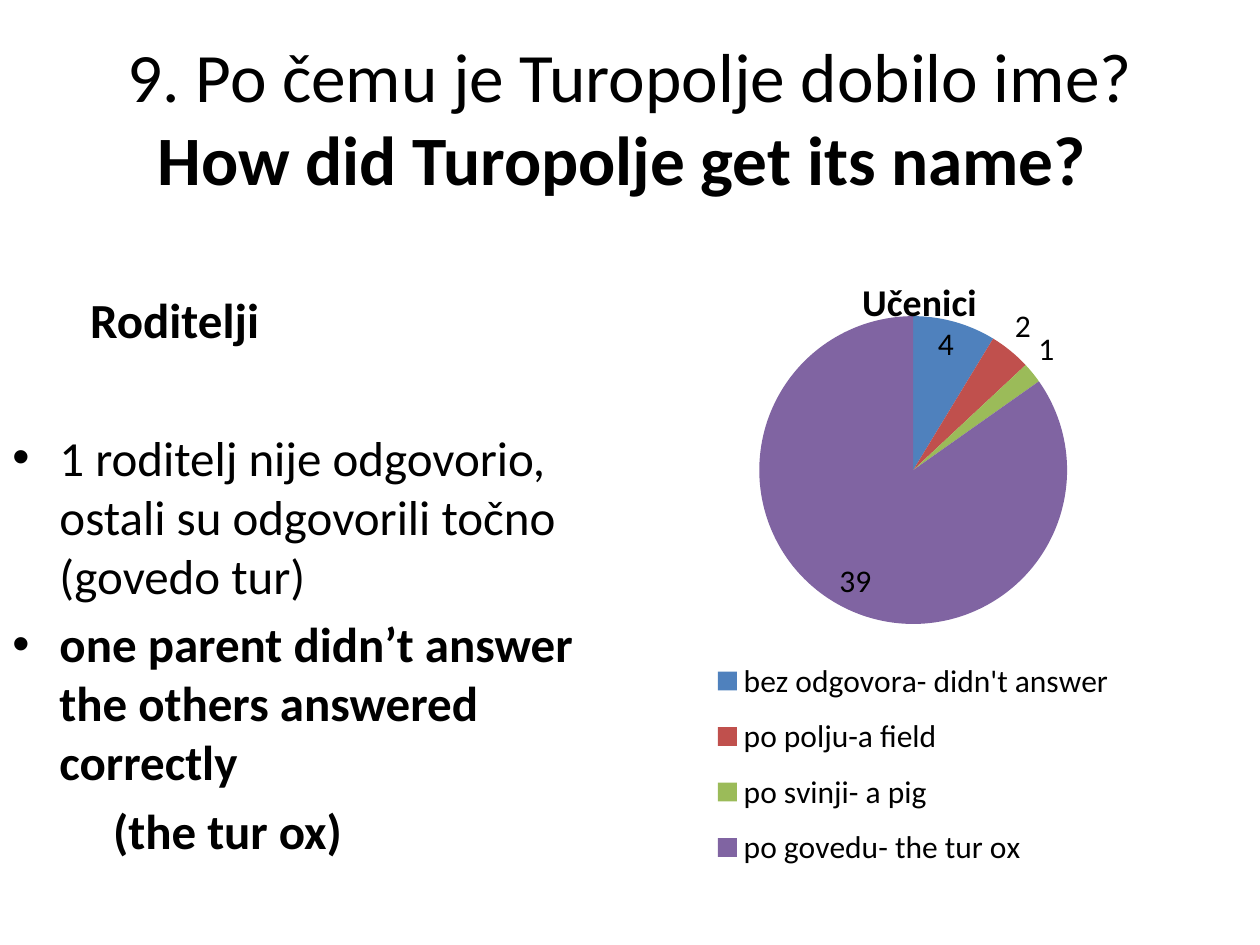
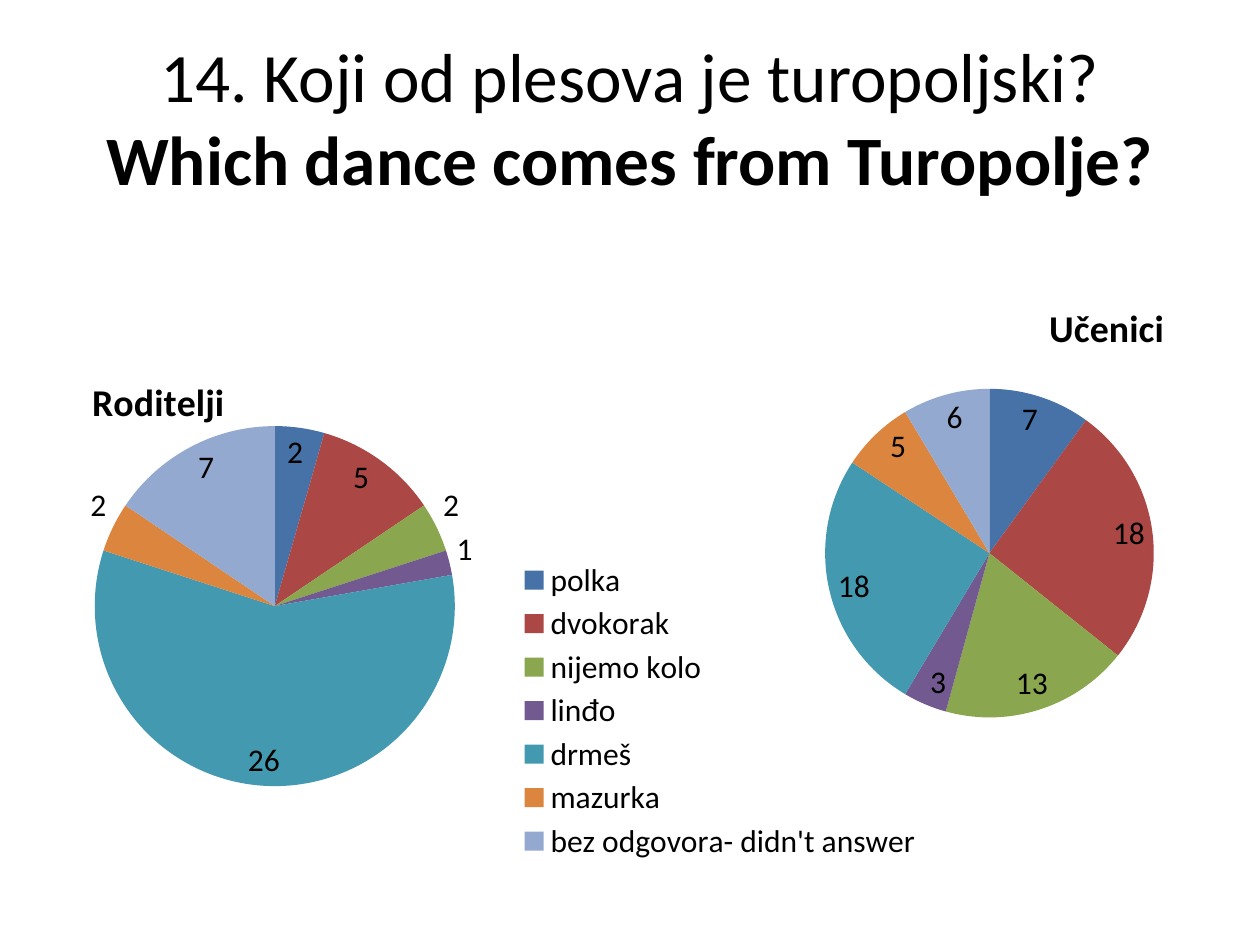
from lxml.etree import SubElement, Element
from pptx import Presentation
from pptx.chart.data import CategoryChartData as Data
from pptx.dml.color import RGBColor as Rgb
from pptx.enum.chart import XL_CHART_TYPE as Kind, XL_LABEL_POSITION as Spot
from pptx.enum.chart import XL_LEGEND_POSITION as Side
from pptx.enum.text import MSO_ANCHOR as Anchor, PP_ALIGN as Align
from pptx.oxml.ns import qn
from pptx.util import Cm, Pt

INK = {
    "text": "000000", "blue": "4F81BD", "red": "C0504D", "green": "9BBB59",
    "plum": "8064A2", "navy": "4672A8", "brick": "AB4744", "moss": "8AA64F",
    "grape": "725990", "teal": "4299B0", "rust": "DC853E", "pale": "93A9CF",
}
FOUR = ["blue", "red", "green", "plum"]
SEVEN = ["navy", "brick", "moss", "grape", "teal", "rust", "pale"]


class Deck:
    """Holds the style and the current slide."""

    def __init__(self):
        self.prs = Presentation()
        self.prs.slide_width, self.prs.slide_height = Cm(25.4), Cm(19.05)
        self.slide = None

    def page(self, first, second):
        self.slide = self.prs.slides.add_slide(self.prs.slide_layouts[6])
        frame = self.box(1.27, 0.76, 22.86, 3.17)
        frame.vertical_anchor = Anchor.MIDDLE
        para = frame.paragraphs[0]
        para.alignment = Align.CENTER
        self.run(para, first, 39.6)
        para.add_line_break()
        self.run(para, second, 39.6, True)

    def style(self, font, size, bold=False):
        look = {"name": "Calibri", "size": Pt(size), "bold": bold}
        for key, value in look.items():
            setattr(font, key, value)
        font.color.rgb = Rgb.from_string(INK["text"])

    def run(self, para, text, size, bold=False):
        run = para.add_run()
        run.text = text
        self.style(run.font, size, bold)

    def box(self, *area):
        frame = self.slide.shapes.add_textbox(*map(Cm, area)).text_frame
        frame.word_wrap = True
        return frame

    def body(self, area, rows):
        frame = self.box(*area)
        for num, (text, bold, mark, left, gap) in enumerate(rows):
            para = frame.add_paragraph() if num else frame.paragraphs[0]
            if num:
                para.space_before = Pt(gap)
            props = para._p.get_or_add_pPr()
            props.set("marL", str(Cm(left)))
            props.set("indent", str(-Cm(left) if mark else 0))
            if mark:
                SubElement(props, qn("a:buFont")).set("typeface", "Arial")
                SubElement(props, qn("a:buChar")).set("char", mark)
            self.run(para, text, 28, bold)

    def place(self, part, index, spots, inner=False):
        for old in part.findall(qn("c:layout")):
            part.remove(old)
        lay = Element(qn("c:layout"))
        part.insert(index, lay)
        man = SubElement(lay, qn("c:manualLayout"))
        if inner:
            SubElement(man, qn("c:layoutTarget")).set("val", "inner")
        for tag in ("xMode", "yMode"):
            SubElement(man, qn("c:" + tag)).set("val", "edge")
        for tag, value in zip("xywh", spots):
            SubElement(man, qn("c:" + tag)).set("val", str(value))

    def pie(self, area, name, cats, vals, hues, plot, head, key=None):
        data = Data()
        data.categories = cats
        data.add_series(name, vals)
        chart = self.slide.shapes.add_chart(Kind.PIE, *map(Cm, area), data).chart
        self.style(chart.font, 18)
        chart.has_title = True
        self.run(chart.chart_title.text_frame.paragraphs[0], name, 21.6, True)
        self.place(chart.chart_title._element, 1, head)
        pie = chart.plots[0]
        self.place(pie._element.getparent(), 0, plot, True)
        pie.vary_by_categories = True
        for num, hue in enumerate(hues):
            fill = pie.series[0].points[num].format.fill
            fill.solid()
            fill.fore_color.rgb = Rgb.from_string(INK[hue])
        pie.has_data_labels = True
        labels = pie.data_labels
        look = {"show_value": True, "show_percentage": False, "position": Spot.BEST_FIT}
        for item, value in look.items():
            setattr(labels, item, value)
        self.style(labels.font, 18)
        chart.has_legend = key is not None
        if key:
            chart.legend.position = Side.RIGHT
            chart.legend.include_in_layout = False
            self.style(chart.legend.font, 18)
            self.place(chart.legend._element, 1, key)


def main():
    deck = Deck()
    deck.page("9. Po čemu je Turopolje dobilo ime?", "How did Turopolje get its name? ")
    deck.body((0, 5.72, 12.09, 12.57), [
        ("Roditelji", True, "", 1.57, 0),
        ("1 roditelj nije odgovorio, ostali su odgovorili točno (govedo tur)",
         False, "•", 0.95, 45),
        ("one parent didn’t answer the others answered correctly",
         True, "•", 0.95, 5.6),
        ("(the tur ox)", True, "", 2.03, 5.6),
    ])
    deck.pie((11.91, 4.72, 13, 13.79), "Učenici",
             ["bez odgovora- didn't answer", "po polju-a field",
              "po svinji- a pig", "po govedu- the tur ox"],
             [4, 2, 1, 39], FOUR, (0.26, 0.12, 0.48, 0.45),
             (0.41, 0.05), (0.1, 0.6, 0.8, 0.35))

    deck.page("14. Koji od plesova je turopoljski?", "Which dance comes from Turopolje?")
    deck.pie((0, 4.52, 19.1, 14.53), "Roditelji",
             ["polka", "dvokorak", "nijemo kolo", "linđo", "drmeš", "mazurka",
              "bez odgovora- didn't answer"],
             [2, 5, 2, 1, 26, 2, 7], SEVEN, (0.1, 0.28, 0.38, 0.5),
             (0.09, 0.2), (0.54, 0.46, 0.44, 0.43))
    deck.pie((13.49, 4.93, 11.23, 12.57), "Učenici", [str(n) for n in range(1, 8)],
             [7, 18, 13, 3, 18, 5, 6], SEVEN, (0.28, 0.23, 0.59, 0.53), (0.67, 0.08))
    deck.prs.save("out.pptx")


if __name__ == "__main__":
    main()
